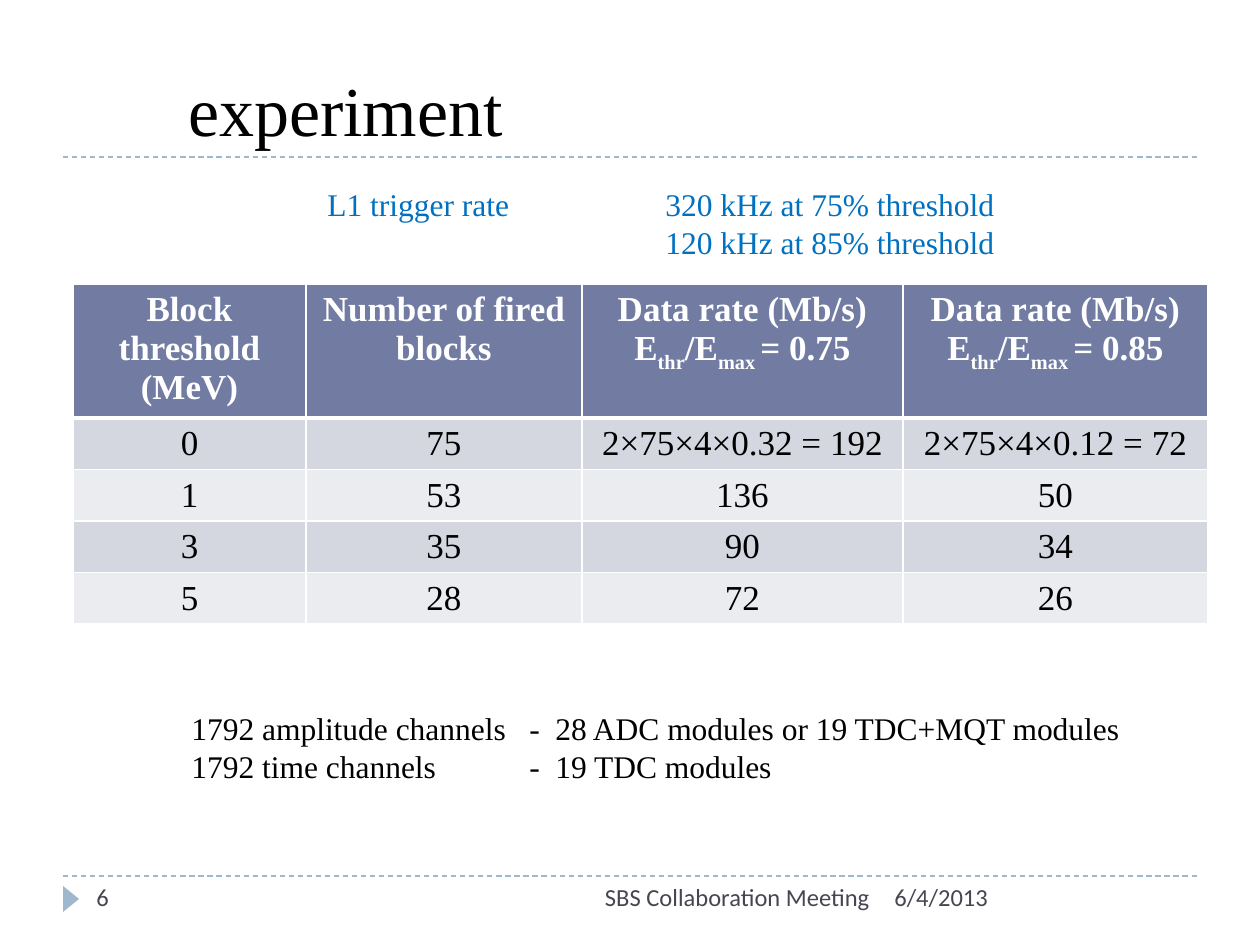
import dataclasses
import pptx
import pptx.dml.color
import pptx.enum.dml
import pptx.enum.shapes
import pptx.enum.text
import pptx.oxml
import pptx.oxml.ns
import pptx.util
from lxml import etree

SCALE = 914400 / 126
HUES = {
    "rule": "9FB8CD", "foot": "464653", "ink": "000000", "blue": "0070C0",
    "head": "727CA3", "dark": "D5D7E0", "pale": "EBECF0", "white": "FFFFFF",
}
SERIF = "Times New Roman"
SANS = "Calibri"
ALIGN = pptx.enum.text.PP_ALIGN
SHAPE = pptx.enum.shapes.MSO_SHAPE


@dataclasses.dataclass
class Box:
    left: int
    top: int
    width: int
    height: int


@dataclasses.dataclass
class Style:
    face: str
    size: int
    hue: str
    bold: bool = False
    align: ALIGN = ALIGN.LEFT


@dataclasses.dataclass
class Note:
    box: Box
    lines: list[str]
    style: Style
    tabs: tuple[int, ...] = ()


FOOT = Style(SANS, 14, "foot")
NOTES = [
    Note(Box(84, 876, 273, 50), ["6"], FOOT),
    Note(Box(882, 876, 315, 50), ["6/4/2013"], FOOT),
    Note(Box(399, 876, 483, 50), ["SBS Collaboration Meeting"],
         dataclasses.replace(FOOT, align=ALIGN.RIGHT)),
    Note(Box(315, 179, 714, 89),
         ["L1 trigger rate\t320 kHz at 75% threshold",
          "\t120 kHz at 85% threshold"],
         Style(SERIF, 18, "blue"), (338,)),
    Note(Box(179, 703, 970, 89),
         ["1792 amplitude channels\t-\t28 ADC modules or 19 TDC+MQT modules",
          "1792 time channels\t-\t19 TDC modules"],
         Style(SERIF, 18, "ink"), (338, 364)),
]
GRID = Box(73, 284, 1135, 338)
COLS = [233, 276, 321, 305]
TALL, LOW = 134, 51
ROWS = [
    [["Block threshold", "(MeV)"], ["Number of fired blocks"],
     ["Data rate (Mb/s)", "E_thr_/E_max _= 0.75"],
     ["Data rate (Mb/s)", "E_thr_/E_max _= 0.85"]],
    [["0"], ["75"], ["2×75×4×0.32 = 192"], ["2×75×4×0.12 = 72"]],
    [["1"], ["53"], ["136"], ["50"]],
    [["3"], ["35"], ["90"], ["34"]],
    [["5"], ["28"], ["72"], ["26"]],
]


def px(count: int) -> pptx.util.Emu:
    return pptx.util.Emu(round(count * SCALE))


def span(box: Box) -> list[pptx.util.Emu]:
    return [px(part) for part in dataclasses.astuple(box)]


def hue(name: str) -> pptx.dml.color.RGBColor:
    return pptx.dml.color.RGBColor.from_string(HUES[name])


def node(owner, tag: str, **attrs: str):
    return etree.SubElement(owner, pptx.oxml.ns.qn(tag), attrs)


def write(frame, lines: list[str], style: Style, tabs: tuple[int, ...] = ()) -> None:
    for index, line in enumerate(lines):
        para = frame.add_paragraph() if index else frame.paragraphs[0]
        para.alignment = style.align
        if tabs:
            stops = node(para._p.get_or_add_pPr(), "a:tabLst")
            for stop in tabs:
                node(stops, "a:tab", pos=str(px(stop)), algn="l")
        font = para.font
        font.name, font.size, font.bold = style.face, pptx.util.Pt(style.size), style.bold
        font.color.rgb = hue(style.hue)
        for order, part in enumerate(line.split("_")):
            run = para.add_run()
            run.text = part
            if order % 2:
                run._r.get_or_add_rPr().set("baseline", "-25000")


def add_note(slide, note: Note) -> None:
    frame = slide.shapes.add_textbox(*span(note.box)).text_frame
    frame.word_wrap = True
    write(frame, note.lines, note.style, note.tabs)


def add_rule(slide, top: int) -> None:
    rule = slide.shapes.add_connector(
        pptx.enum.shapes.MSO_CONNECTOR.STRAIGHT, px(63), px(top), px(1197), px(top))
    rule.line.color.rgb = hue("rule")
    rule.line.width = pptx.util.Pt(0.75)
    rule.line.dash_style = pptx.enum.dml.MSO_LINE.DASH
    node(rule._element.spPr, "a:effectLst")


def add_mark(slide) -> None:
    mark = slide.shapes.add_shape(SHAPE.ISOSCELES_TRIANGLE, *span(Box(58, 891, 26, 16)))
    mark.rotation = 90
    mark.shadow.inherit = False
    mark.fill.solid()
    mark.fill.fore_color.rgb = hue("rule")
    mark.line.fill.background()


def add_edge(cell, side: str, width: int) -> None:
    edge = node(cell._tc.get_or_add_tcPr(), f"a:ln{side}", w=str(pptx.util.Pt(width)))
    node(node(edge, "a:solidFill"), "a:srgbClr", val=HUES["white"])


def add_grid(slide) -> None:
    table = slide.shapes.add_table(len(ROWS), len(COLS), *span(GRID)).table
    for col, width in zip(table.columns, COLS):
        col.width = px(width)
    for index, row in enumerate(ROWS):
        head = index == 0
        table.rows[index].height = px(TALL if head else LOW)
        fill = "head" if head else "dark" if index % 2 else "pale"
        style = Style(SERIF, 20, "white" if head else "ink", head, ALIGN.CENTER)
        for place, lines in enumerate(row):
            cell = table.cell(index, place)
            write(cell.text_frame, lines, style)
            for side in "LRTB":
                thick = (head and side == "B") or (index == 1 and side == "T")
                add_edge(cell, side, 3 if thick else 1)
            cell.fill.solid()
            cell.fill.fore_color.rgb = hue(fill)


def add_title(slide) -> None:
    title = slide.shapes.title
    title.left, title.top, title.width, title.height = span(Box(63, 21, 1134, 136))
    frame = title.text_frame
    frame.margin_left = px(125)
    frame.vertical_anchor = pptx.enum.text.MSO_ANCHOR.BOTTOM
    write(frame, ["experiment"], Style(SERIF, 40, "ink"))


def main() -> None:
    deck = pptx.Presentation()
    deck.slide_width, deck.slide_height = px(1260), px(945)
    slide = deck.slides.add_slide(deck.slide_layouts[5])
    for top in (876, 157):
        add_rule(slide, top)
    add_mark(slide)
    add_title(slide)
    add_grid(slide)
    for note in NOTES:
        add_note(slide, note)
    deck.save("out.pptx")


if __name__ == "__main__":
    main()
